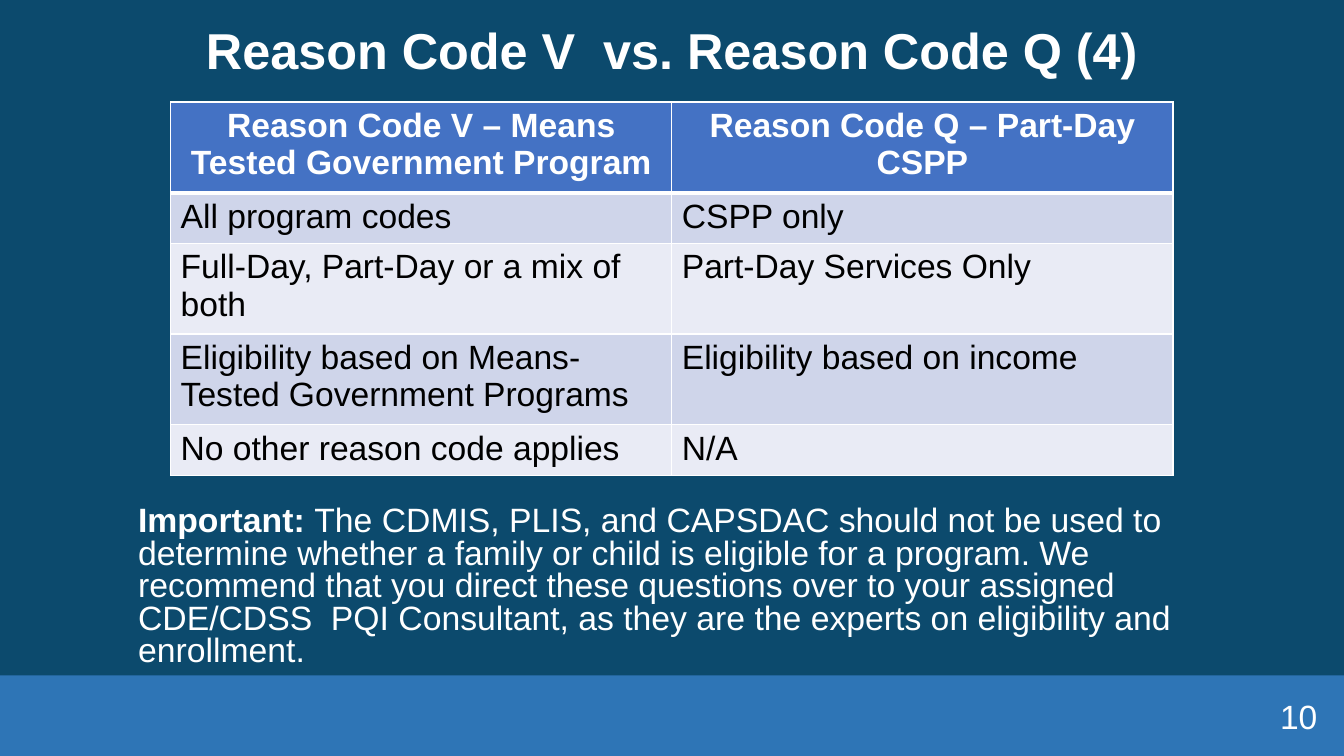
from lxml.etree import SubElement
from pptx import Presentation
from pptx.dml.color import RGBColor
from pptx.enum.shapes import MSO_SHAPE
from pptx.enum.text import MSO_ANCHOR, PP_ALIGN
from pptx.oxml.ns import qn
from pptx.util import Cm, Pt

COLORS = {
    "background": "0C4A6D",
    "footer": "2E75B6",
    "header": "4472C4",
    "band_dark": "CFD5EA",
    "band_light": "E9EBF5",
    "white": "FFFFFF",
    "black": "000000",
}
FONT = "Arial"
SLIDE_W, SLIDE_H = 33.87, 19.05
LINE_H, CELL_PAD = 0.95, 0.25

TITLE = "Reason Code V  vs. Reason Code Q (4)"
ROWS = [
    ("Reason Code V – Means Tested Government Program", "Reason Code Q – Part-Day CSPP"),
    ("All program codes", "CSPP only"),
    ("Full-Day, Part-Day or a mix of both", "Part-Day Services Only"),
    ("Eligibility based on Means-Tested Government Programs", "Eligibility based on income"),
    ("No other reason code applies", "N/A"),
]
LINES_PER_ROW = [2, 1, 2, 2, 1]
NOTE_LABEL = "Important: "
NOTE = (
    "The CDMIS, PLIS, and CAPSDAC should not be used to determine whether a family "
    "or child is eligible for a program. We recommend that you direct these questions "
    "over to your assigned CDE/CDSS  PQI Consultant, as they are the experts on "
    "eligibility and enrollment."
)


def rgb(name):
    return RGBColor.from_string(COLORS[name])


def style_run(r, size=24, color="white", bold=False):
    r.font.name = FONT
    r.font.size = Pt(size)
    r.font.bold = bold
    r.font.color.rgb = rgb(color)


def add_text(slide, box, parts, size=24, align=PP_ALIGN.LEFT, anchor=MSO_ANCHOR.MIDDLE):
    """Add one paragraph of (text, bold) parts and return it."""
    tf = slide.shapes.add_textbox(*map(Cm, box)).text_frame
    tf.word_wrap = True
    tf.vertical_anchor = anchor
    p = tf.paragraphs[0]
    p.alignment = align
    for text, bold in parts:
        r = p.add_run()
        r.text = text
        style_run(r, size, bold=bold)
    return p


def add_title(slide, box):
    p = add_text(slide, box, [(TITLE, True)], 36, PP_ALIGN.CENTER)
    p.line_spacing = 0.9


def add_note(slide, box):
    p = add_text(slide, box, [(NOTE_LABEL, True), (NOTE, False)], 24.1, anchor=MSO_ANCHOR.TOP)
    p.line_spacing = 0.8
    p.space_before = Pt(10)


def set_borders(cell, widths):
    """Draw white cell borders; widths maps L, R, T, B to points."""
    tc_pr = cell._tc.get_or_add_tcPr()
    for side, width in widths.items():
        ln = SubElement(tc_pr, qn(f"a:ln{side}"), w=str(Pt(width)))
        fill = SubElement(ln, qn("a:solidFill"))
        SubElement(fill, qn("a:srgbClr"), val=COLORS["white"])


def add_comparison_table(slide, box):
    frame = slide.shapes.add_table(len(ROWS), len(ROWS[0]), *map(Cm, box))
    table = frame.table
    for row, lines in zip(table.rows, LINES_PER_ROW):
        row.height = Cm(lines * LINE_H + CELL_PAD)
    for i, texts in enumerate(ROWS):
        header = i == 0
        fill = "header" if header else ("band_dark" if i % 2 else "band_light")
        for j, text in enumerate(texts):
            cell = table.cell(i, j)
            set_borders(cell, {"L": 1, "R": 1, "T": 3 if i == 1 else 1, "B": 3 if header else 1})
            cell.fill.solid()
            cell.fill.fore_color.rgb = rgb(fill)
            p = cell.text_frame.paragraphs[0]
            p.text = text
            p.alignment = PP_ALIGN.CENTER if header else PP_ALIGN.LEFT
            style_run(p.runs[0], color="white" if header else "black", bold=header)


def add_footer(slide, box, number):
    left, top, width, height = box
    band = slide.shapes.add_shape(MSO_SHAPE.RECTANGLE, *map(Cm, box))
    band.shadow.inherit = False
    band.fill.solid()
    band.fill.fore_color.rgb = rgb("footer")
    band.line.fill.background()
    number_w, number_h = 7.62, 1.02
    number_box = (left + width - number_w - 0.42, top + (height - number_h) / 2 + 0.02,
                  number_w, number_h)
    add_text(slide, number_box, [(number, False)], align=PP_ALIGN.RIGHT)


def main():
    prs = Presentation()
    prs.slide_width, prs.slide_height = Cm(SLIDE_W), Cm(SLIDE_H)
    slide = prs.slides.add_slide(prs.slide_layouts[6])
    slide.background.fill.solid()
    slide.background.fill.fore_color.rgb = rgb("background")
    add_footer(slide, (0, 17.02, SLIDE_W, 2.03), "10")
    add_title(slide, (0.43, 0.5, 33.02, 1.68))
    add_note(slide, (3.23, 12.65, 27.4, 4.57))
    add_comparison_table(slide, (4.3, 2.57, 25.26, 8.85))
    prs.save("out.pptx")


if __name__ == "__main__":
    main()
